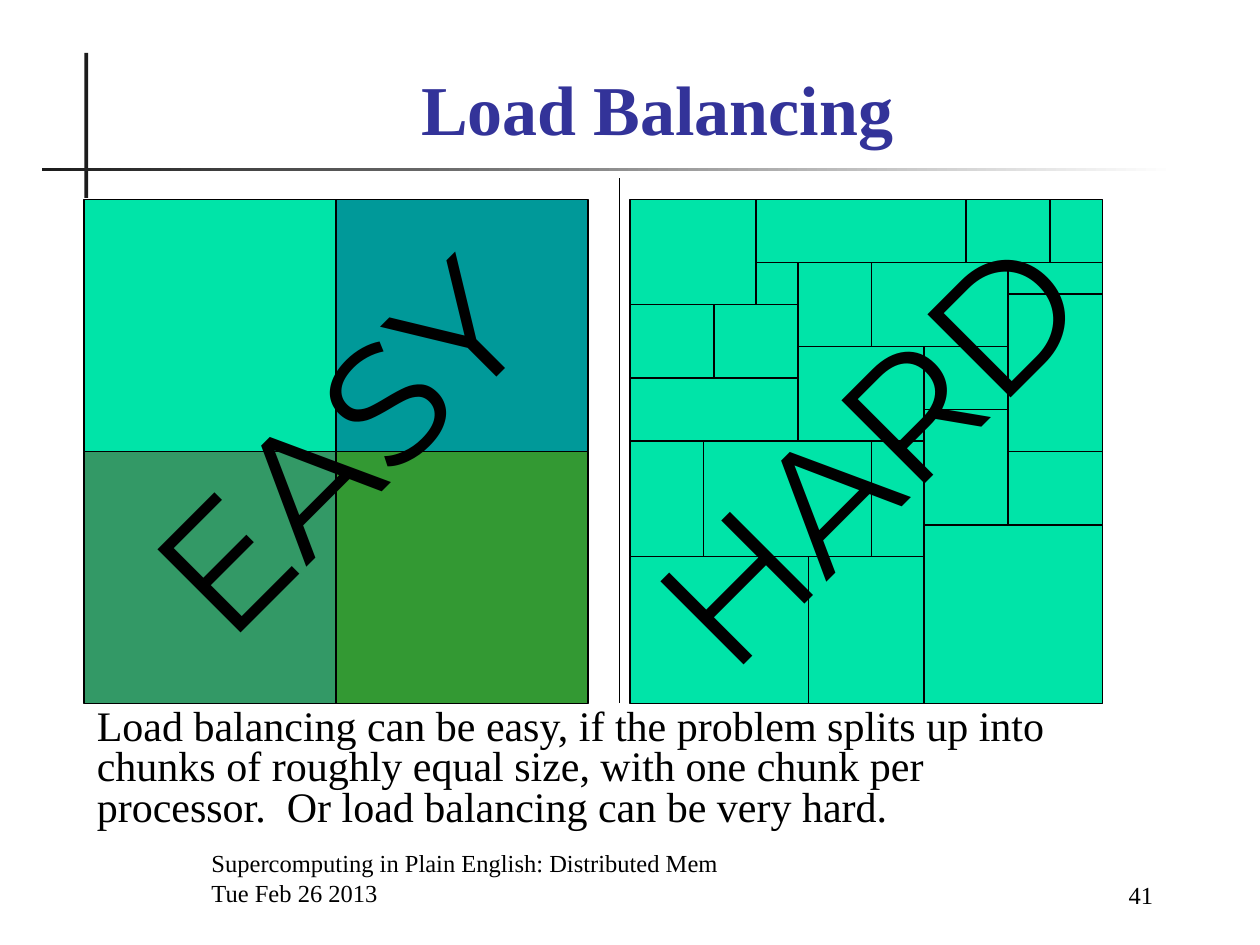
from lxml.etree import SubElement
from pptx import Presentation
from pptx.dml.color import RGBColor
from pptx.enum.shapes import MSO_CONNECTOR, MSO_SHAPE
from pptx.enum.text import MSO_ANCHOR, MSO_AUTO_SIZE, PP_ALIGN
from pptx.oxml.ns import qn
from pptx.util import Inches, Pt

COLORS = {"ink": "000000", "bar": "1C1C1C", "paper": "FFFFFF", "title": "333399",
          "mint": "00E4A8", "teal": "009999", "sea": "339966", "leaf": "339933"}
SERIF, SANS = "Times New Roman", "Montserrat"
UNIT = Inches(1) // 12
TOP = 19  # first row of both diagrams, in units
EASY_LEFT, HARD_LEFT = 8, 60
EASY_SIDE = 24
EASY_COLORS = ["mint", "teal", "sea", "leaf"]
# Column, row, width and height of each uneven chunk, in units
HARD_CHUNKS = [
    (0, 0, 12, 10), (12, 0, 20, 6), (32, 0, 8, 6), (40, 0, 5, 6),
    (12, 6, 4, 4), (16, 6, 7, 8), (23, 6, 13, 8), (36, 6, 9, 3),
    (0, 10, 8, 7), (8, 10, 8, 7), (36, 9, 9, 15),
    (16, 14, 12, 9), (28, 14, 8, 6), (0, 17, 16, 6), (28, 20, 8, 11),
    (0, 23, 7, 11), (7, 23, 16, 11), (23, 23, 5, 11), (36, 24, 9, 7),
    (28, 31, 17, 17), (0, 34, 17, 14), (17, 34, 11, 14),
]


def color(name):
    return RGBColor.from_string(COLORS[name])


def inches(*values):
    return [Inches(v) for v in values]


def set_font(p, size, font=SERIF, ink="ink", bold=False):
    p.font.size, p.font.name, p.font.bold = Pt(size), font, bold
    p.font.color.rgb = color(ink)


def add_rule(s, box, fade=False):
    """Add a thin bar, optionally fading to white on the right."""
    sp = s.shapes.add_shape(MSO_SHAPE.RECTANGLE, *inches(*box))
    sp.shadow.inherit = False
    sp.line.fill.background()
    if fade:
        sp.fill.gradient()
        sp.fill.gradient_angle = 0
        for stop, name in zip(sp.fill.gradient_stops, ("bar", "paper")):
            stop.color.rgb = color(name)
    else:
        sp.fill.solid()
        sp.fill.fore_color.rgb = color("bar")


def add_chunk(s, col, row, width, height, fill="mint"):
    sp = s.shapes.add_shape(MSO_SHAPE.RECTANGLE,
                            *(n * UNIT for n in (col, row, width, height)))
    sp.shadow.inherit = False
    sp.fill.solid()
    sp.fill.fore_color.rgb = color(fill)
    sp.line.color.rgb = color("ink")
    sp.line.width = Pt(0.75)


def add_divider(s, col, top, bottom):
    line = s.shapes.add_connector(MSO_CONNECTOR.STRAIGHT, col * UNIT, top * UNIT,
                                  col * UNIT, bottom * UNIT)
    line.line.color.rgb = color("ink")
    line.line.width = Pt(0.75)
    SubElement(line._element.spPr, qn("a:effectLst"))


def add_text(s, box, lines, size, font=SERIF, align=PP_ALIGN.LEFT,
             anchor=MSO_ANCHOR.TOP, spacing=None, rotation=0, grow=False):
    sp = s.shapes.add_textbox(*inches(*box))
    sp.rotation = rotation
    tf = sp.text_frame
    tf.word_wrap = True
    tf.auto_size = MSO_AUTO_SIZE.SHAPE_TO_FIT_TEXT if grow else MSO_AUTO_SIZE.NONE
    tf.vertical_anchor = anchor
    tf.text = "\n".join(lines)
    for p in tf.paragraphs:
        p.alignment = align
        p.line_spacing = spacing
        set_font(p, size, font)


def set_title(s, text):
    sp = s.shapes.title
    sp.left, sp.top, sp.width, sp.height = inches(0.83, 0.5, 8.77, 0.74)
    tf = sp.text_frame
    tf.text = text
    tf.auto_size = MSO_AUTO_SIZE.NONE
    tf.vertical_anchor = MSO_ANCHOR.BOTTOM
    p = tf.paragraphs[0]
    p.alignment = PP_ALIGN.CENTER
    set_font(p, 40, ink="title", bold=True)


def main():
    prs = Presentation()
    prs.slide_width, prs.slide_height = inches(10, 7.5)
    s = prs.slides.add_slide(prs.slide_layouts[5])

    add_rule(s, (0.67, 0.42, 0.03, 1.15))
    add_rule(s, (0.33, 1.33, 9, 0.03), fade=True)
    set_title(s, "Load Balancing")

    for i, fill in enumerate(EASY_COLORS):
        row, col = divmod(i, 2)
        add_chunk(s, EASY_LEFT + col * EASY_SIDE, TOP + row * EASY_SIDE,
                  EASY_SIDE, EASY_SIDE, fill)
    add_divider(s, 59, 17, TOP + 2 * EASY_SIDE)
    for col, row, width, height in HARD_CHUNKS:
        add_chunk(s, HARD_LEFT + col, TOP + row, width, height)

    add_text(s, (0.67, 5.58, 8.17, 1.07),
             ["Load balancing can be easy, if the problem splits up into chunks of "
              "roughly equal size, with one chunk per processor.  Or load balancing "
              "can be very hard."], 24, spacing=0.8, grow=True)
    for word, box in (("EASY", (0.5, 2.67, 4.33, 1.7)),
                      ("HARD", (4.65, 2.71, 4.44, 1.7))):
        add_text(s, box, [word], 96, SANS, PP_ALIGN.CENTER, rotation=315, grow=True)

    add_text(s, (1.58, 6.75, 6.08, 0.5),
             ["Supercomputing in Plain English: Distributed Mem", "Tue Feb 26 2013"],
             14, anchor=MSO_ANCHOR.BOTTOM)
    add_text(s, (7.83, 6.77, 1.42, 0.5), ["41"], 14, align=PP_ALIGN.RIGHT,
             anchor=MSO_ANCHOR.BOTTOM)
    prs.save("out.pptx")


if __name__ == "__main__":
    main()
